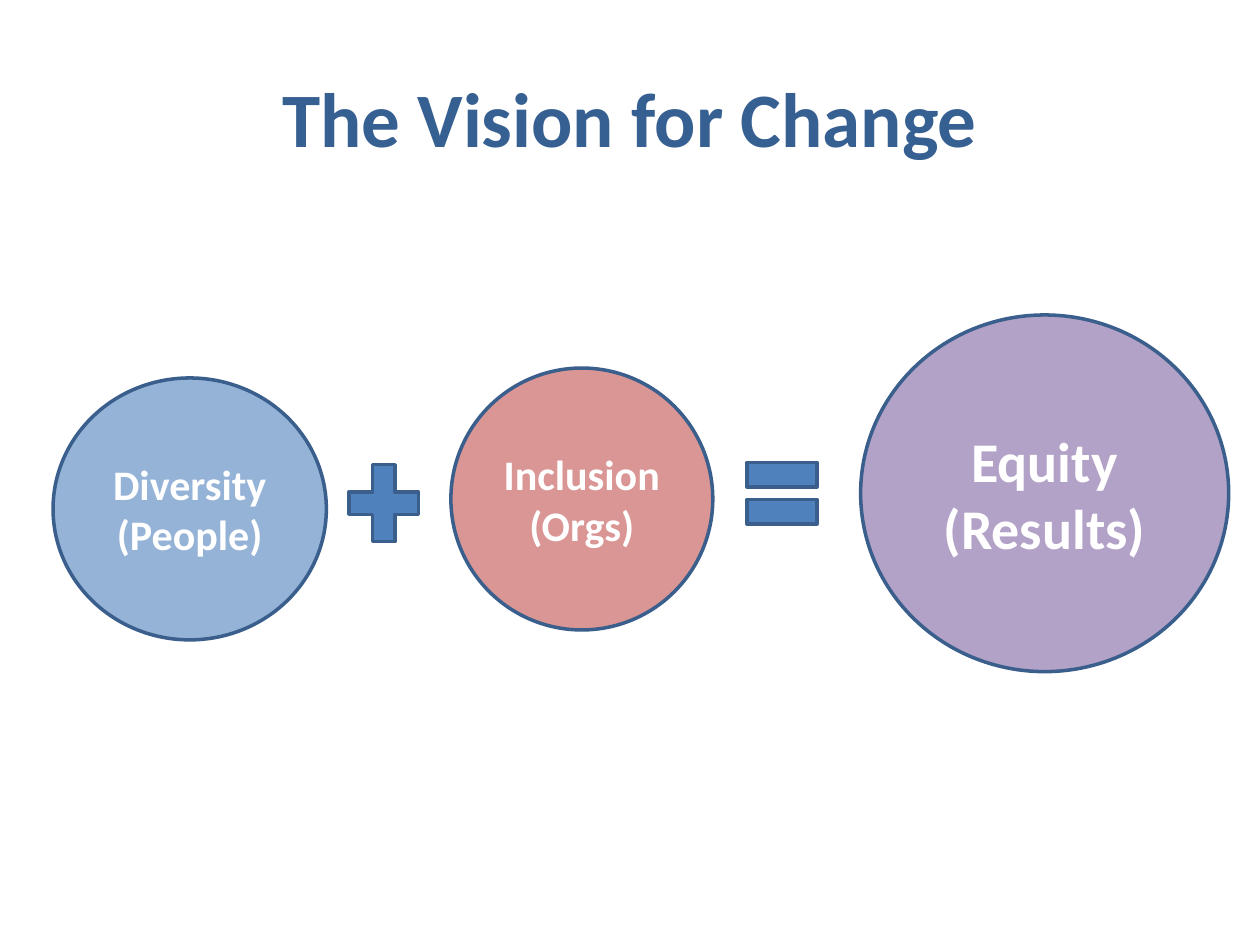
"""Build the slide showing that diversity plus inclusion equals equity."""
from pptx import Presentation
from pptx.dml.color import RGBColor
from pptx.enum.shapes import MSO_SHAPE
from pptx.enum.text import MSO_ANCHOR, PP_ALIGN
from pptx.util import Cm, Pt

FONT = "Calibri"
OUTLINE = "3A5F8C"
SIGN_FILL = "4F81BD"
TITLE = ("The Vision for Change", (1.27, 0.76, 22.86, 3.18), 44, "376092")
CIRCLES = [
    (("Diversity", "(People)"), (1.07, 7.62, 5.51, 5.28), 24, "95B3D7"),
    (("Inclusion", "(Orgs)"), (9.09, 7.42, 5.28, 5.28), 24, "D99694"),
    (("Equity", "(Results)"), (17.35, 6.35, 7.42, 7.19), 32, "B3A2C7"),
]
SIGNS = [
    (MSO_SHAPE.MATH_PLUS, (6.78, 9.09, 1.91, 2.11)),
    (MSO_SHAPE.MATH_EQUAL, (14.81, 8.89, 1.91, 2.11)),
]


def color(value):
    return RGBColor.from_string(value)


def write_lines(shape, lines, size, text_color):
    frame = shape.text_frame
    frame.word_wrap = True
    frame.vertical_anchor = MSO_ANCHOR.MIDDLE
    for index, line in enumerate(lines):
        paragraph = frame.add_paragraph() if index else frame.paragraphs[0]
        paragraph.alignment = PP_ALIGN.CENTER
        run = paragraph.add_run()
        run.text = line
        run.font.name = FONT
        run.font.size = Pt(size)
        run.font.bold = True
        run.font.color.rgb = color(text_color)


def add_outlined_shape(slide, kind, box, fill):
    shape = slide.shapes.add_shape(kind, *map(Cm, box))
    shape.shadow.inherit = False
    shape.fill.solid()
    shape.fill.fore_color.rgb = color(fill)
    shape.line.color.rgb = color(OUTLINE)
    shape.line.width = Pt(2)
    return shape


def main():
    presentation = Presentation()
    presentation.slide_width = Cm(25.4)
    presentation.slide_height = Cm(19.05)
    slide = presentation.slides.add_slide(presentation.slide_layouts[6])

    text, box, size, text_color = TITLE
    title = slide.shapes.add_textbox(*map(Cm, box))
    write_lines(title, [text], size, text_color)

    for lines, box, size, fill in CIRCLES:
        circle = add_outlined_shape(slide, MSO_SHAPE.OVAL, box, fill)
        write_lines(circle, lines, size, "FFFFFF")
    for kind, box in SIGNS:
        add_outlined_shape(slide, kind, box, SIGN_FILL)

    presentation.save("out.pptx")


if __name__ == "__main__":
    main()
